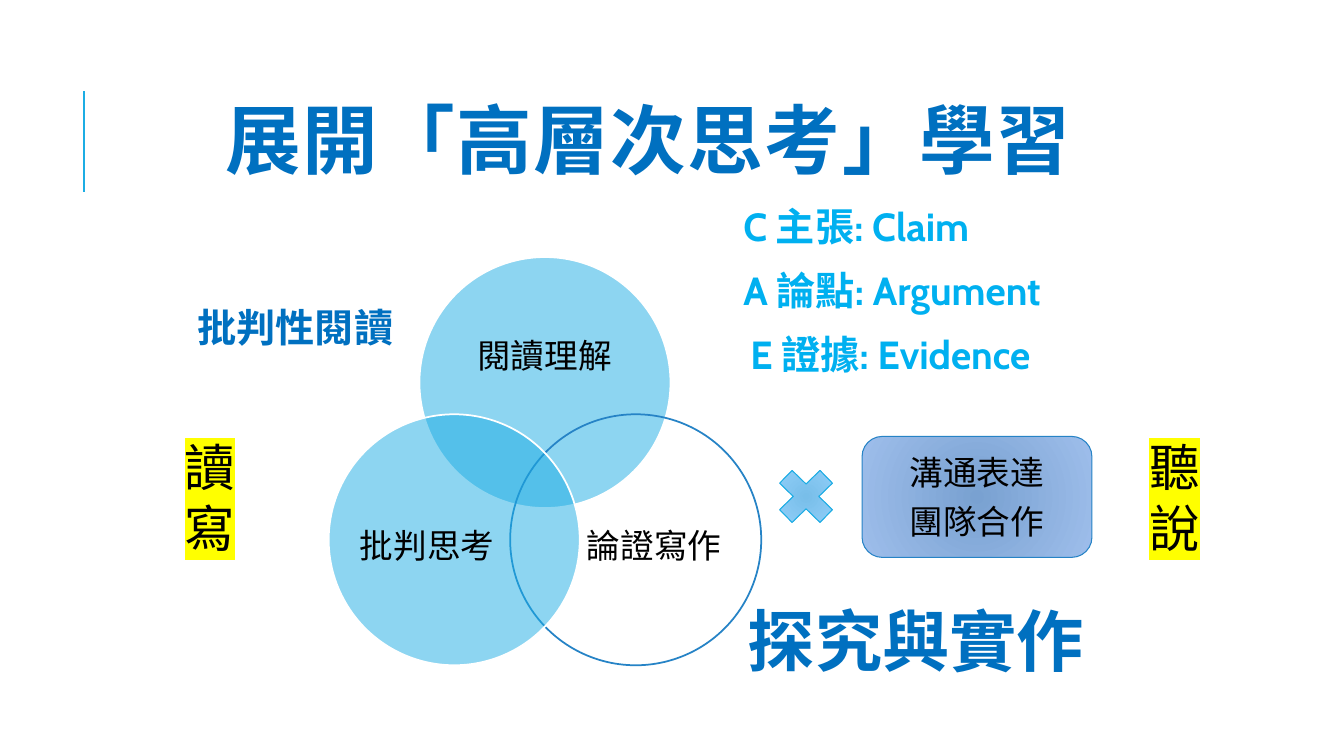
from itertools import groupby

from lxml.etree import SubElement
from pptx import Presentation
from pptx.dml.color import RGBColor
from pptx.enum.shapes import MSO_CONNECTOR, MSO_SHAPE
from pptx.enum.text import MSO_ANCHOR, MSO_AUTO_SIZE, PP_ALIGN
from pptx.oxml.ns import qn
from pptx.util import Pt

PX = 9144
ACCENT = RGBColor(0x1C, 0xAD, 0xE4)
OUTLINE = RGBColor(0x26, 0x83, 0xC6)
HEADING = RGBColor(0x00, 0x70, 0xC0)
CLAIM = RGBColor(0x00, 0xB0, 0xF0)
BLACK = RGBColor(0x00, 0x00, 0x00)
WHITE = RGBColor(0xFF, 0xFF, 0xFF)
CROSS_GLOW = (RGBColor(0x78, 0xBE, 0xE9), RGBColor(0x9A, 0xD5, 0xFF))
TEAM_GLOW = (RGBColor(0x79, 0xA1, 0xD1), RGBColor(0x9E, 0xBE, 0xEB))
BRACKET_FONT = "Noto Sans CJK TC"


def px(*lengths):
    """Turn whole px into EMU."""
    return [length * PX for length in lengths]


def write(shape, text, size, color=BLACK, font="Cabin", bold=False,
          align=PP_ALIGN.CENTER, before=0, after=0, leading=1.0,
          tracking=0, highlight=None, inset=None):
    """Fill a shape with formatted lines, setting corner brackets in their own font."""
    frame = shape.text_frame
    frame.word_wrap = True
    frame.auto_size = MSO_AUTO_SIZE.NONE
    frame.vertical_anchor = MSO_ANCHOR.MIDDLE
    if inset is not None:
        frame.margin_left = frame.margin_right = inset
        frame.margin_top = frame.margin_bottom = inset
    for number, line in enumerate(text.split("\n")):
        paragraph = frame.add_paragraph() if number else frame.paragraphs[0]
        paragraph.alignment = align
        paragraph.line_spacing = leading
        paragraph.space_before = Pt(before if number else 0)
        paragraph.space_after = Pt(after)
        for is_bracket, letters in groupby(line, key=lambda letter: letter in "「」"):
            run = paragraph.add_run()
            run.text = "".join(letters)
            face = BRACKET_FONT if is_bracket else font
            run.font.size = Pt(size)
            run.font.bold = bold
            run.font.color.rgb = color
            run.font.name = face
            props = run.font._element
            SubElement(props, qn("a:ea")).set("typeface", face)
            if tracking:
                props.set("spc", str(tracking * 100))
            if highlight:
                marker = SubElement(props, qn("a:highlight"))
                SubElement(marker, qn("a:srgbClr")).set("val", highlight)
                props.find(qn("a:solidFill")).addnext(marker)


def add_panel(shapes, kind, box, fill=None, line=None, width=0.75):
    """Add a preset shape with a plain fill and outline, or none."""
    panel = shapes.add_shape(kind, *px(*box))
    panel.shadow.inherit = False
    if fill is None:
        panel.fill.background()
    else:
        panel.fill.solid()
        panel.fill.fore_color.rgb = fill
    if line is None:
        panel.line.fill.background()
    else:
        panel.line.color.rgb = line
        panel.line.width = Pt(width)
    return panel


def add_glow(panel, colors):
    """Give a shape a gradient that spreads from its centre."""
    panel.fill.gradient()
    for stop, color in zip(panel.fill.gradient_stops, colors):
        stop.color.rgb = color
    gradient = panel._element.spPr.find(qn("a:gradFill"))
    gradient.remove(gradient.find(qn("a:lin")))
    spread = SubElement(gradient, qn("a:path"), {"path": "circle"})
    SubElement(spread, qn("a:fillToRect"), dict.fromkeys("ltrb", "100000"))


def add_circle(shapes, left, top, filled):
    """Add one Venn circle, half transparent or hollow."""
    circle = add_panel(shapes, MSO_SHAPE.OVAL, (left, top, 249, 249),
                       ACCENT if filled else None, WHITE if filled else OUTLINE, 1.25)
    if filled:
        tint = circle._element.spPr.find(qn("a:solidFill")).find(qn("a:srgbClr"))
        SubElement(tint, qn("a:alpha")).set("val", "50000")


def add_venn(slide):
    """Add the three overlapping skills with their labels."""
    venn = slide.shapes.add_group_shape().shapes
    for skill, corner, label_box, filled, align in (
            ("閱讀理解", (416, 255), (449, 299, 182, 112), True, PP_ALIGN.CENTER),
            ("論證寫作", (506, 411), (582, 475, 149, 137), False, PP_ALIGN.LEFT),
            ("批判思考", (326, 411), (349, 475, 149, 137), True, PP_ALIGN.CENTER)):
        add_circle(venn, *corner, filled)
        write(venn.add_textbox(*px(*label_box)), skill, 24,
              align=align, leading=0.9, inset=0)


def add_title_bar(slide):
    """Add the thin upright line left of the title."""
    bar = slide.shapes.add_connector(MSO_CONNECTOR.STRAIGHT, *px(83, 190, 83, 90))
    bar.line.color.rgb = ACCENT
    bar.line.width = Pt(1.5)
    SubElement(bar._element.spPr, qn("a:effectLst"))


def main():
    """Build the slide on higher-order thinking."""
    deck = Presentation()
    deck.slide_width, deck.slide_height = px(1333, 750)
    slide = deck.slides.add_slide(deck.slide_layouts[5])
    shapes = slide.shapes
    rounded = MSO_SHAPE.ROUNDED_RECTANGLE

    add_title_bar(slide)
    title = shapes.title
    title.left, title.top, title.width, title.height = px(112, 64, 1063, 164)
    write(title, "展開「高層次思考」學習", 54, HEADING, "Calibri", bold=True,
          leading=0.8, tracking=1)

    add_venn(slide)

    claims = add_panel(shapes, rounded, (718, 191, 380, 193), WHITE)
    write(claims, "C 主張: Claim\nA 論點: Argument\nE 證據: Evidence", 28, CLAIM,
          bold=True, align=PP_ALIGN.JUSTIFY, before=12)
    evidence = claims.text_frame.paragraphs[-1]
    evidence._p.get_or_add_pPr().set("marL", str(7 * PX))

    reading = add_panel(shapes, rounded, (180, 284, 226, 81), WHITE)
    write(reading, "批判性閱讀", 28, HEADING, bold=True)

    cross = add_panel(shapes, MSO_SHAPE.MATH_MULTIPLY, (761, 455, 77, 75), line=ACCENT)
    add_glow(cross, CROSS_GLOW)

    teamwork = add_panel(shapes, rounded, (855, 433, 228, 120), line=OUTLINE)
    add_glow(teamwork, TEAM_GLOW)
    write(teamwork, "溝通表達\n團隊合作", 24, after=6)

    for modes, left in (("聽\n說", 1127), ("讀\n寫", 170)):
        write(add_panel(shapes, rounded, (left, 417, 65, 152), WHITE), modes, 36,
              highlight="FFFF00")

    inquiry = add_panel(shapes, rounded, (723, 584, 371, 102))
    write(inquiry, "探究與實作", 48, HEADING, bold=True)

    deck.save("out.pptx")


if __name__ == "__main__":
    main()
